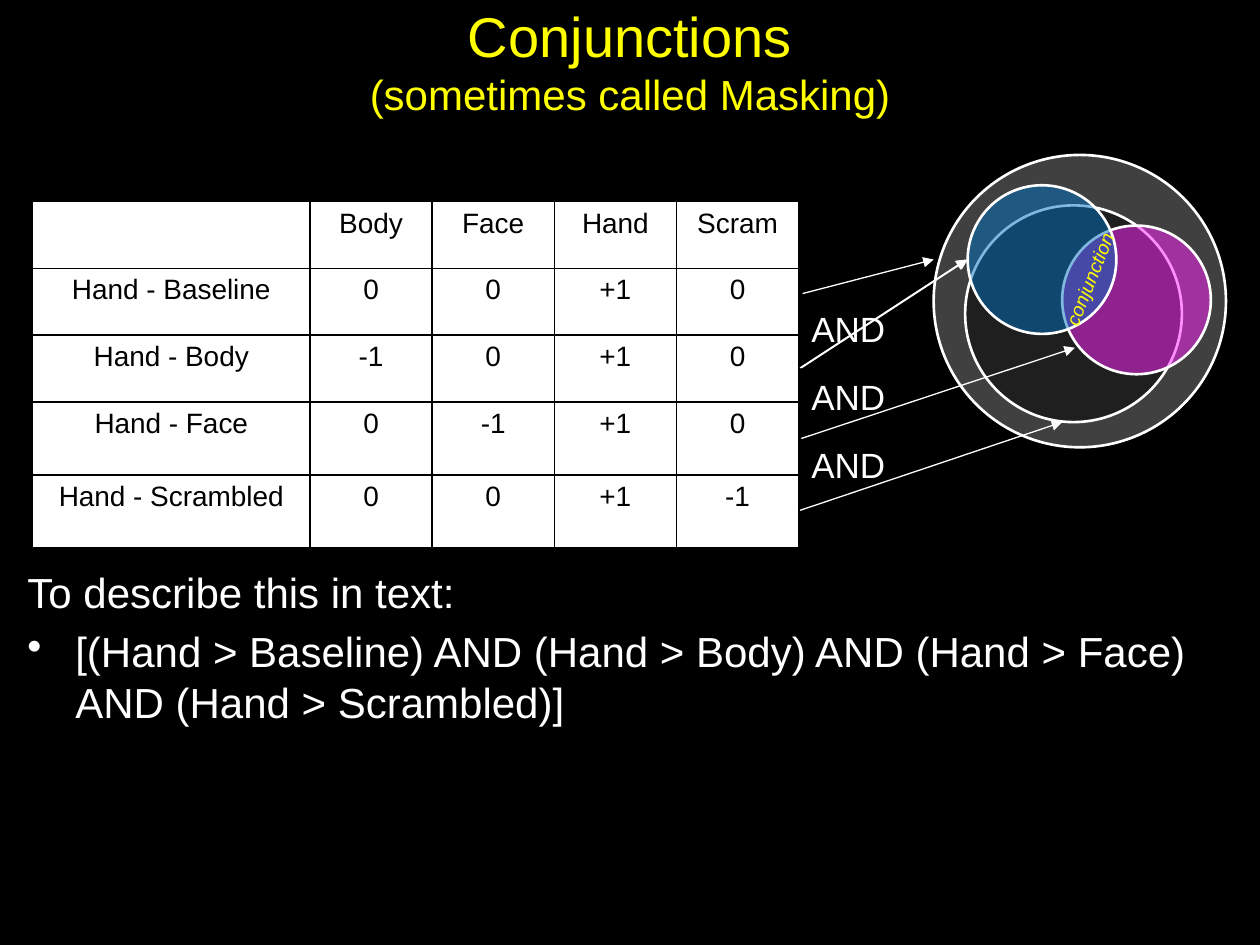
from pptx import Presentation
from pptx.dml.color import RGBColor
from pptx.enum.shapes import MSO_CONNECTOR, MSO_SHAPE
from pptx.enum.text import MSO_ANCHOR, MSO_AUTO_SIZE, PP_ALIGN
from pptx.oxml import parse_xml
from pptx.oxml.ns import nsdecls, qn
from pptx.oxml.xmlchemy import OxmlElement
from pptx.util import Inches, Pt

BLACK = RGBColor(0, 0, 0)
WHITE = RGBColor(255, 255, 255)
YELLOW = RGBColor(255, 255, 0)
PINK = RGBColor(0xFF, 0x25, 0xFE)
BLUE = RGBColor(0, 0x70, 0xC0)

TITLE = [("Conjunctions", 32), ("(sometimes called Masking)", 24)]
BODY = [
    "To describe this in text:",
    "[(Hand > Baseline) AND (Hand > Body) AND (Hand > Face) AND (Hand > Scrambled)]",
]
ROWS = [
    ("", "Body", "Face", "Hand", "Scram"),
    ("Hand - Baseline", "0", "0", "+1", "0"),
    ("Hand - Body", "-1", "0", "+1", "0"),
    ("Hand - Face", "0", "-1", "+1", "0"),
    ("Hand - Scrambled", "0", "0", "+1", "-1"),
]
WIDTHS = [2.2] + [0.97] * 4
HEIGHTS = [0.53] * 3 + [0.58] * 2
BACK = [
    (7.41, 1.23, 2.32, WHITE, 25),
    (7.66, 1.63, 1.72, BLACK, 50),
    (8.43, 1.79, 1.18, PINK, 50),
]
FRONT = (7.68, 1.47, 1.18, BLUE, 50)
ARROWS = [
    (6.37, 2.33, 7.41, 2.06),
    (6.36, 2.92, 7.68, 2.06),
    (6.35, 2.92, 7.67, 2.06),
    (6.36, 3.48, 8.53, 2.76),
    (6.35, 4.05, 8.43, 3.35),
]


def put(obj, **vals):
    for key, val in vals.items():
        setattr(obj, key, val)


def ink(font, size, color, **more):
    put(font, name="Arial", size=Pt(size), **more)
    font.color.rgb = color


def label(slide, text, box, size, color, turn=0, **more):
    shape = slide.shapes.add_textbox(*map(Inches, box))
    put(shape, rotation=turn)
    put(shape.text_frame, word_wrap=False, text=text)
    ink(shape.text_frame.paragraphs[0].font, size, color, **more)


def circle(slide, left, top, size, color, alpha):
    box = map(Inches, (left, top, size, size))
    shape = slide.shapes.add_shape(MSO_SHAPE.OVAL, *box)
    shape.shadow.inherit = False
    shape.fill.solid()
    shape.fill.fore_color.rgb = color
    tint = OxmlElement("a:alpha")
    tint.set("val", str(alpha * 1000))
    shape.element.spPr.find(qn("a:solidFill"))[0].append(tint)
    shape.line.color.rgb = WHITE
    shape.line.width = Pt(1.5)


def arrow(slide, ends):
    line = slide.shapes.add_connector(MSO_CONNECTOR.STRAIGHT, *map(Inches, ends))
    line.line.color.rgb = WHITE
    line.line.width = Pt(0.75)
    tip = OxmlElement("a:tailEnd")
    tip.set("type", "triangle")
    props = line.element.spPr
    props.find(qn("a:ln")).append(tip)
    props.append(OxmlElement("a:effectLst"))


def heading(slide):
    title = slide.shapes.title
    put(title, left=Inches(0.75), top=Inches(-0.04),
        width=Inches(8.5), height=Inches(1.04))
    put(title.text_frame, vertical_anchor=MSO_ANCHOR.MIDDLE,
        word_wrap=True, auto_size=MSO_AUTO_SIZE.NONE)
    para = title.text_frame.paragraphs[0]
    para.alignment = PP_ALIGN.CENTER
    for num, (text, size) in enumerate(TITLE):
        if num:
            para.add_line_break()
        run = para.add_run()
        run.text = text
        ink(run.font, size, YELLOW)


def body(slide):
    box = slide.shapes.add_textbox(*map(Inches, (0.12, 4.45, 9.76, 1.97)))
    put(box.text_frame, word_wrap=True, text="\n".join(BODY))
    first, point = box.text_frame.paragraphs
    props = point._p.get_or_add_pPr()
    props.set("marL", str(Inches(0.38)))
    props.set("indent", str(Inches(-0.38)))
    mark = OxmlElement("a:buChar")
    mark.set("char", "•")
    props.append(mark)
    point.space_before = Pt(5)
    for para in (first, point):
        ink(para.font, 24, WHITE)


def border(cell):
    props = cell._tc.get_or_add_tcPr()
    for side in "LRTB":
        props.append(parse_xml(
            f'<a:ln{side} {nsdecls("a")} w="{Pt(1)}"><a:solidFill>'
            f'<a:srgbClr val="{BLACK}"/></a:solidFill></a:ln{side}>'))


def grid(slide):
    box = map(Inches, (0.26, 1.6, sum(WIDTHS), sum(HEIGHTS)))
    table = slide.shapes.add_table(len(ROWS), len(WIDTHS), *box).table
    put(table, first_row=False, horz_banding=False)
    for col, width in zip(table.columns, WIDTHS):
        col.width = Inches(width)
    for row, height, texts in zip(table.rows, HEIGHTS, ROWS):
        row.height = Inches(height)
        for cell, text in zip(row.cells, texts):
            border(cell)
            cell.fill.solid()
            cell.fill.fore_color.rgb = WHITE
            cell.text = text
            para = cell.text_frame.paragraphs[0]
            para.alignment = PP_ALIGN.CENTER
            ink(para.font, 16, BLACK)


def main():
    deck = Presentation()
    put(deck, slide_width=Inches(10), slide_height=Inches(7.5))
    slide = deck.slides.add_slide(deck.slide_layouts[5])
    slide.background.fill.solid()
    slide.background.fill.fore_color.rgb = BLACK
    heading(slide)
    body(slide)
    for num in range(3):
        label(slide, "AND", (6.34, 2.39 + 0.54 * num, 0.81, 0.44), 20, WHITE)
    for disc in BACK:
        circle(slide, *disc)
    for ends in ARROWS:
        arrow(slide, ends)
    circle(slide, *FRONT)
    label(slide, "conjunction", (8.16, 2.07, 0.98, 0.29), 11, YELLOW,
          turn=291.9, italic=True)
    grid(slide)
    deck.save("out.pptx")


if __name__ == "__main__":
    main()
